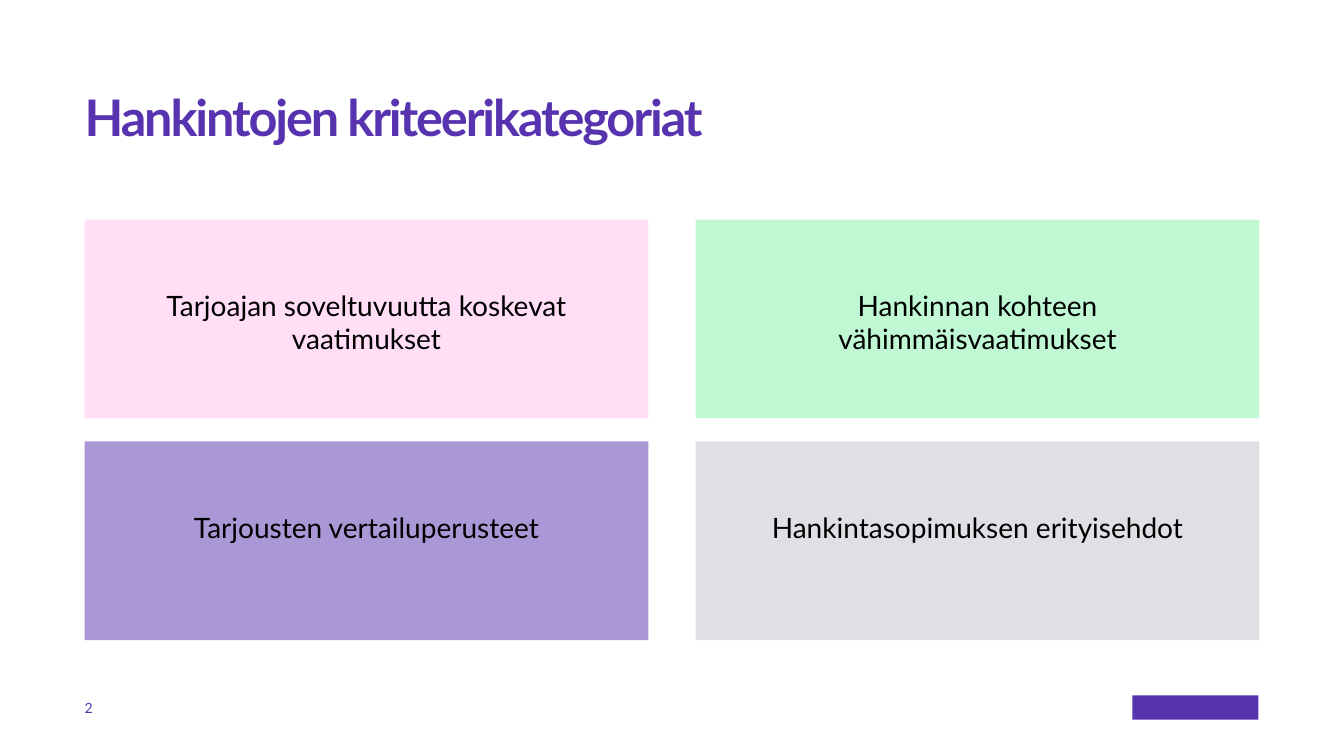
"""Build a slide showing four categories of procurement criteria."""
from dataclasses import dataclass

import pptx
import pptx.dml.color
import pptx.enum.shapes
import pptx.enum.text
import pptx.oxml.ns
import pptx.util
from lxml import etree
from pptx.util import Inches

PURPLE = "5733AF"
LEFT, TOP = 0.84, 2.18
CARD_WIDTH, CARD_HEIGHT = 5.59, 1.97
COLUMN_STEP, ROW_STEP = 6.06, 2.2
CARD_INSETS = (0.24, 0.68, 0.24, 0.24)
ALIGN = pptx.enum.text.PP_ALIGN
ANCHOR = pptx.enum.text.MSO_ANCHOR


@dataclass
class Category:
    text: str
    color: str


CATEGORIES = [
    Category("Tarjoajan soveltuvuutta koskevat vaatimukset", "FFBFEE"),
    Category("Hankinnan kohteen vähimmäisvaatimukset", "81F3A9"),
    Category("Tarjousten vertailuperusteet", PURPLE),
    Category("Hankintasopimuksen erityisehdot", "C5BFCA"),
]


def rgb(color: str) -> pptx.dml.color.RGBColor:
    return pptx.dml.color.RGBColor.from_string(color)


def write(box, text: str, *, size: float, color: str, bold: bool = False,
          align=ALIGN.LEFT, anchor=ANCHOR.TOP, insets=(0, 0, 0, 0),
          line_spacing: float = 1.0, tracking: float = 0) -> None:
    frame = box.text_frame
    frame.word_wrap = True
    frame.vertical_anchor = anchor
    (frame.margin_left, frame.margin_top,
     frame.margin_right, frame.margin_bottom) = map(Inches, insets)
    para = frame.paragraphs[0]
    para.alignment = align
    para.line_spacing = line_spacing
    span = para.add_run()
    span.text = text
    span.font.name = "Lato"
    span.font.size = pptx.util.Pt(size)
    span.font.bold = bold
    span.font.color.rgb = rgb(color)
    if tracking:
        span.font._element.set("spc", str(round(tracking * 100)))


def add_block(page, left: float, top: float, width: float, height: float,
              color: str, opacity: int = 100):
    block = page.shapes.add_shape(
        pptx.enum.shapes.MSO_SHAPE.RECTANGLE,
        Inches(left), Inches(top), Inches(width), Inches(height))
    block.shadow.inherit = False
    block.fill.solid()
    block.fill.fore_color.rgb = rgb(color)
    block.line.fill.background()
    if opacity < 100:
        qn = pptx.oxml.ns.qn
        tint = block._element.spPr.find(qn("a:solidFill")).find(qn("a:srgbClr"))
        etree.SubElement(tint, qn("a:alpha")).set("val", str(opacity * 1000))
    return block


def add_text(page, left: float, top: float, width: float, height: float,
             text: str, **style) -> None:
    box = page.shapes.add_textbox(
        Inches(left), Inches(top), Inches(width), Inches(height))
    write(box, text, **style)


def main() -> None:
    deck = pptx.Presentation()
    deck.slide_width, deck.slide_height = Inches(13.33), Inches(7.5)
    page = deck.slides.add_slide(deck.slide_layouts[6])

    add_block(page, 11.23, 6.9, 1.25, 0.24, PURPLE)
    add_text(page, LEFT, 0.92, 11.66, 1.1, "Hankintojen kriteerikategoriat",
             size=36, color=PURPLE, bold=True, line_spacing=0.9, tracking=-1.5)
    for index, category in enumerate(CATEGORIES):
        row, column = divmod(index, 2)
        card = add_block(page, LEFT + column * COLUMN_STEP, TOP + row * ROW_STEP,
                         CARD_WIDTH, CARD_HEIGHT, category.color, opacity=50)
        write(card, category.text, size=20, color="000000",
              align=ALIGN.CENTER, insets=CARD_INSETS)
    add_text(page, LEFT, 6.9, 0.47, 0.24, "2",
             size=10, color=PURPLE, anchor=ANCHOR.MIDDLE)

    deck.save("out.pptx")


if __name__ == "__main__":
    main()
